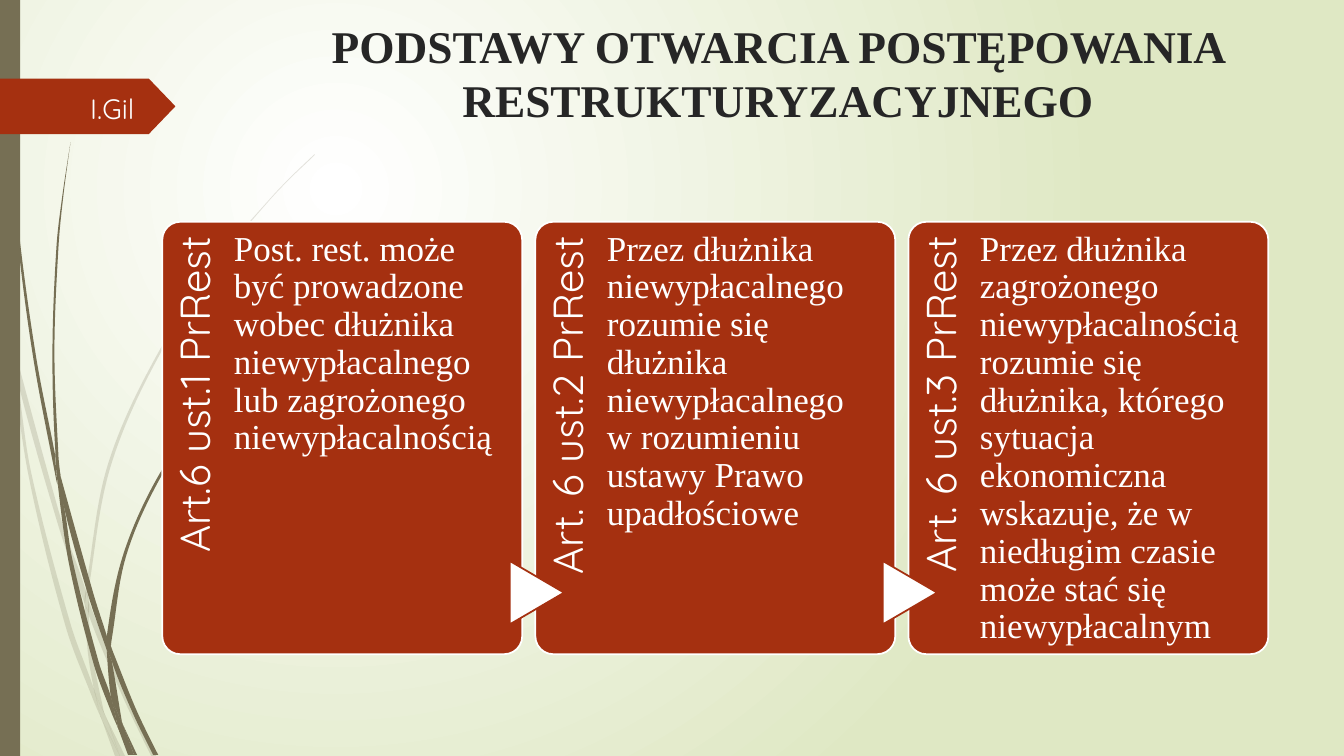
import math

import pptx
import pptx.util
from lxml import etree
from pptx.dml.color import RGBColor
from pptx.enum.shapes import MSO_SHAPE
from pptx.enum.text import MSO_ANCHOR, MSO_AUTO_SIZE, PP_ALIGN
from pptx.oxml.ns import qn
from pptx.util import Inches, Pt

TITLE = "PODSTAWY OTWARCIA POSTĘPOWANIA RESTRUKTURYZACYJNEGO"
AUTHOR = "I.Gil"
CARDS = [
    ("Art.6 ust.1 PrRest",
     "Post. rest. może być prowadzone wobec dłużnika niewypłacalnego "
     "lub zagrożonego niewypłacalnością"),
    ("Art. 6 ust.2 PrRest",
     "Przez dłużnika niewypłacalnego rozumie się dłużnika niewypłacalnego "
     "w rozumieniu ustawy Prawo upadłościowe"),
    ("Art. 6 ust.3 PrRest",
     "Przez dłużnika zagrożonego niewypłacalnością rozumie się dłużnika, "
     "którego sytuacja ekonomiczna wskazuje, że w niedługim czasie "
     "może stać się niewypłacalnym"),
]

PALE_BLADES = [
    [(0.11, 3.5), (0.09, 3.22), (0, 2.82), (0, 2.99), (0.1, 3.44)],
    [(0.58, 5.22), (0.84, 5.99), (0.85, 5.86), (0.62, 5.2), (0.14, 3.45), (0.17, 3.76)],
    [(0.92, 6.07), (0.88, 5.96), (0.88, 6.1), (1.23, 6.94), (1.5, 7.5), (1.55, 7.5),
     (1.27, 6.92)],
    [(1.19, 7.5), (1.24, 7.5), (1.05, 7.11)],
    [(0.93, 6.83), (0.7, 6.19), (0.31, 4.69), (0.17, 3.76), (0.11, 3.5), (0.28, 4.7),
     (0.65, 6.21), (0.92, 6.93), (1.01, 7.14), (0.99, 7.07)],
    [(0.84, 5.99), (0.87, 6.46), (0.93, 6.83), (0.96, 6.92), (1.05, 7.11), (1.03, 7.06),
     (0.91, 6.46), (0.88, 6.1), (0.88, 6.08)],
    [(0.88, 5.84), (1.1, 4.62), (1.6, 3.49), (2.29, 2.45), (2.68, 1.98), (2.9, 1.75),
     (3.12, 1.54), (3.12, 1.53), (2.89, 1.75), (2.68, 1.97), (2.28, 2.44), (1.58, 3.48),
     (1.07, 4.61), (0.85, 5.84), (0.85, 5.86), (0.88, 5.96)],
    [(1.01, 7.14), (1.14, 7.5), (1.19, 7.5)],
    [(0.88, 6.08), (0.88, 6.1), (0.88, 5.96), (0.85, 5.86), (0.84, 5.99)],
    [(0.96, 6.92), (0.93, 6.83), (0.99, 7.07), (1.01, 7.14), (1.19, 7.5), (1.05, 7.11)],
]
DARK_BLADES = [
    [(0.07, 1.1), (0.17, 2.33), (0.33, 3.55), (0.56, 4.77), (0.57, 4.81), (0.55, 4.57),
     (0.55, 4.53), (0.36, 3.55), (0.19, 2.32), (0.08, 1.09), (0.05, 0.48), (0.04, 0),
     (0.03, 0), (0.04, 0.48)],
    [(0.88, 5.92), (1.06, 6.45), (1.06, 6.33), (1.06, 6.31), (0.93, 5.9), (0.6, 4.72),
     (0.64, 5.05)],
    [(1.13, 6.49), (1.1, 6.41), (1.11, 6.56), (1.32, 7.08), (1.52, 7.49), (1.57, 7.49),
     (1.36, 7.06)],
    [(1.1, 6.91), (0.98, 6.57), (0.72, 5.56), (0.64, 5.05), (0.57, 4.77), (0.68, 5.57),
     (0.93, 6.59), (1.11, 7.08), (1.17, 7.22), (1.16, 7.17)],
    [(0.6, 4.72), (0.58, 4.53), (0.54, 3.49), (0.58, 2.45), (0.63, 1.93), (0.7, 1.41),
     (0.62, 1.93), (0.56, 2.45), (0.52, 3.49), (0.55, 4.49)],
    [(1.33, 7.49), (1.36, 7.49), (1.22, 7.19)],
    [(0.57, 4.77), (0.64, 5.05), (0.6, 4.72), (0.55, 4.49), (0.55, 4.53)],
    [(1.11, 6.33), (1.25, 5.52), (1.58, 4.76), (2.05, 4.06), (2.31, 3.74), (2.45, 3.59),
     (2.61, 3.44), (2.6, 3.44), (2.45, 3.58), (2.31, 3.73), (2.04, 4.05), (1.56, 4.74),
     (1.22, 5.51), (1.06, 6.31), (1.1, 6.41)],
    [(1.17, 7.22), (1.27, 7.49), (1.31, 7.49)],
    [(1.06, 6.45), (1.1, 6.91), (1.16, 7.06), (1.22, 7.19), (1.21, 7.16), (1.11, 6.56),
     (1.09, 6.51)],
    [(1.06, 6.45), (1.09, 6.51), (1.11, 6.56), (1.1, 6.41), (1.06, 6.31), (1.06, 6.33)],
    [(1.16, 7.06), (1.1, 6.91), (1.16, 7.17), (1.17, 7.22), (1.3, 7.49), (1.33, 7.49),
     (1.22, 7.19)],
]

RUST = RGBColor(0xA5, 0x30, 0x10)
OLIVE = RGBColor(0x76, 0x6F, 0x54)
WHITE = RGBColor(0xFF, 0xFF, 0xFF)
OFF_WHITE = RGBColor(0xFE, 0xFF, 0xFF)
PALE_GREEN = RGBColor(0xDF, 0xE8, 0xC4)
CHARCOAL = RGBColor(0x26, 0x26, 0x26)
SERIF, SANS = "Times New Roman", "Quicksand"
CARD_LEFT, CARD_TOP, CARD_PITCH = 1.61, 2.2, 3.7
CARD_WIDTH, CARD_HEIGHT = 3.57, 4.29


def paint(shape, fill, line=None):
    """Give a shape a flat fill and an optional outline."""
    shape.shadow.inherit = False
    shape.fill.solid()
    shape.fill.fore_color.rgb = fill
    if line is None:
        shape.line.fill.background()
    else:
        shape.line.color.rgb = line
        shape.line.width = Pt(1.25)


def add_box(slide, kind, box, fill, line=None):
    """Add a painted preset shape."""
    shape = slide.shapes.add_shape(kind, *map(Inches, box))
    paint(shape, fill, line)
    return shape


def write(shape, text, font_name, size, color, align, insets, spacing=1.0):
    """Fill a shape with one formatted paragraph."""
    frame = shape.text_frame
    frame.word_wrap = True
    frame.auto_size = MSO_AUTO_SIZE.NONE
    frame.vertical_anchor = MSO_ANCHOR.TOP
    (frame.margin_left, frame.margin_top,
     frame.margin_right, frame.margin_bottom) = map(Inches, insets)
    paragraph = frame.paragraphs[0]
    paragraph.text = text
    paragraph.alignment = align
    paragraph.line_spacing = spacing
    paragraph.font.name = font_name
    paragraph.font.size = Pt(size)
    paragraph.font.color.rgb = color
    return paragraph


def tangent(before, point, after):
    """Return the unit direction through a point, or zero at a sharp corner."""
    turn = math.cos(math.atan2(point[1] - before[1], point[0] - before[0])
                    - math.atan2(after[1] - point[1], after[0] - point[0]))
    if turn < 0.5:
        return 0, 0
    length = math.dist(before, after)
    return (after[0] - before[0]) / length, (after[1] - before[1]) / length


def add_blade(slide, points, opacity):
    """Draw one grass blade as a closed curve through its points."""
    outline = [(Inches(x), Inches(y)) for x, y in points]
    builder = slide.shapes.build_freeform(*outline[0])
    builder.add_line_segments(outline[1:] + outline[:1], close=True)
    blade = builder.convert_to_shape()
    paint(blade, OLIVE)
    color = blade.element.spPr.find(qn("a:solidFill")).find(qn("a:srgbClr"))
    etree.SubElement(color, qn("a:alpha"), val=str(opacity * 1000))

    tangents = [tangent(outline[i - 1], point, outline[(i + 1) % len(outline)])
                for i, point in enumerate(outline)]
    for i, segment in enumerate(list(blade.element.iter(qn("a:lnTo")))):
        j = (i + 1) % len(outline)
        reach = math.dist(outline[i], outline[j]) / 3
        segment.tag = qn("a:cubicBezTo")
        for position, (k, sign) in enumerate(((i, 1), (j, -1))):
            x, y = (round(outline[k][axis] + sign * reach * tangents[k][axis] - origin)
                    for axis, origin in enumerate((blade.left, blade.top)))
            segment.insert(position, etree.Element(qn("a:pt"), x=str(x), y=str(y)))


def set_background(slide):
    """Lay a circular white-to-green gradient behind the slide."""
    fill = slide.background.fill
    fill.gradient()
    for stop, color in zip(fill.gradient_stops, (WHITE, PALE_GREEN)):
        stop.color.rgb = color
    gradient = slide.element.find(".//" + qn("a:gradFill"))
    gradient.remove(gradient.find(qn("a:lin")))
    circle = etree.SubElement(gradient, qn("a:path"))
    circle.set("path", "circle")
    etree.SubElement(circle, qn("a:fillToRect"), l="50000", t="50000", r="100000", b="100000")


def add_card(slide, index, label, text):
    """Add one card with its upright label, body text and incoming arrow."""
    left = CARD_LEFT + index * CARD_PITCH
    card = add_box(slide, MSO_SHAPE.ROUNDED_RECTANGLE,
                   (left, CARD_TOP, CARD_WIDTH, CARD_HEIGHT), RUST, WHITE)
    card.adjustments[0] = 0.05
    heading = slide.shapes.add_textbox(*map(Inches, (left - 1.4, 3.6, 3.52, 0.71)))
    heading.rotation = 270
    write(heading, label, SANS, 30, WHITE, PP_ALIGN.RIGHT, (0, 0.11, 0.15, 0), 0.9)
    if index:
        arrow = add_box(slide, MSO_SHAPE.FLOWCHART_EXTRACT,
                        (left - 0.3, 5.61, 0.63, 0.54), WHITE, RUST)
        arrow.rotation = 90
    body = slide.shapes.add_textbox(*map(Inches, (left + 0.71, CARD_TOP, 2.66, CARD_HEIGHT)))
    write(body, text, SERIF, 25, WHITE, PP_ALIGN.LEFT, (0, 0.09, 0, 0), 0.9)


def main():
    """Build the slide and save it."""
    presentation = pptx.Presentation()
    presentation.slide_width, presentation.slide_height = Inches(13.33), Inches(7.5)
    slide = presentation.slides.add_slide(presentation.slide_layouts[5])
    set_background(slide)
    for blades, opacity in ((PALE_BLADES, 20), (DARK_BLADES, 100)):
        for points in blades:
            add_blade(slide, points, opacity)
    add_box(slide, MSO_SHAPE.RECTANGLE, (0, 0, 0.2, 7.5), OLIVE)
    tag = add_box(slide, MSO_SHAPE.PENTAGON, (0, 0.78, 1.74, 0.55), RUST)
    tag.adjustments[0] = 0.48
    title = slide.shapes.title
    title.left, title.top, title.width, title.height = map(Inches, (2.84, 0.13, 9.75, 1.18))
    heading = write(title, TITLE, SERIF, 32.4, CHARCOAL, PP_ALIGN.CENTER, (0.1, 0.05, 0.1, 0.05))
    heading.font.bold = True
    for index, (label, text) in enumerate(CARDS):
        add_card(slide, index, label, text)
    author = slide.shapes.add_textbox(*map(Inches, (0.64, 0.89, 0.79, 0.37)))
    write(author, AUTHOR, SANS, 20, OFF_WHITE, PP_ALIGN.RIGHT, (0.1, 0.05, 0.1, 0.05))
    author.text_frame.vertical_anchor = MSO_ANCHOR.MIDDLE
    presentation.save("out.pptx")


if __name__ == "__main__":
    main()
